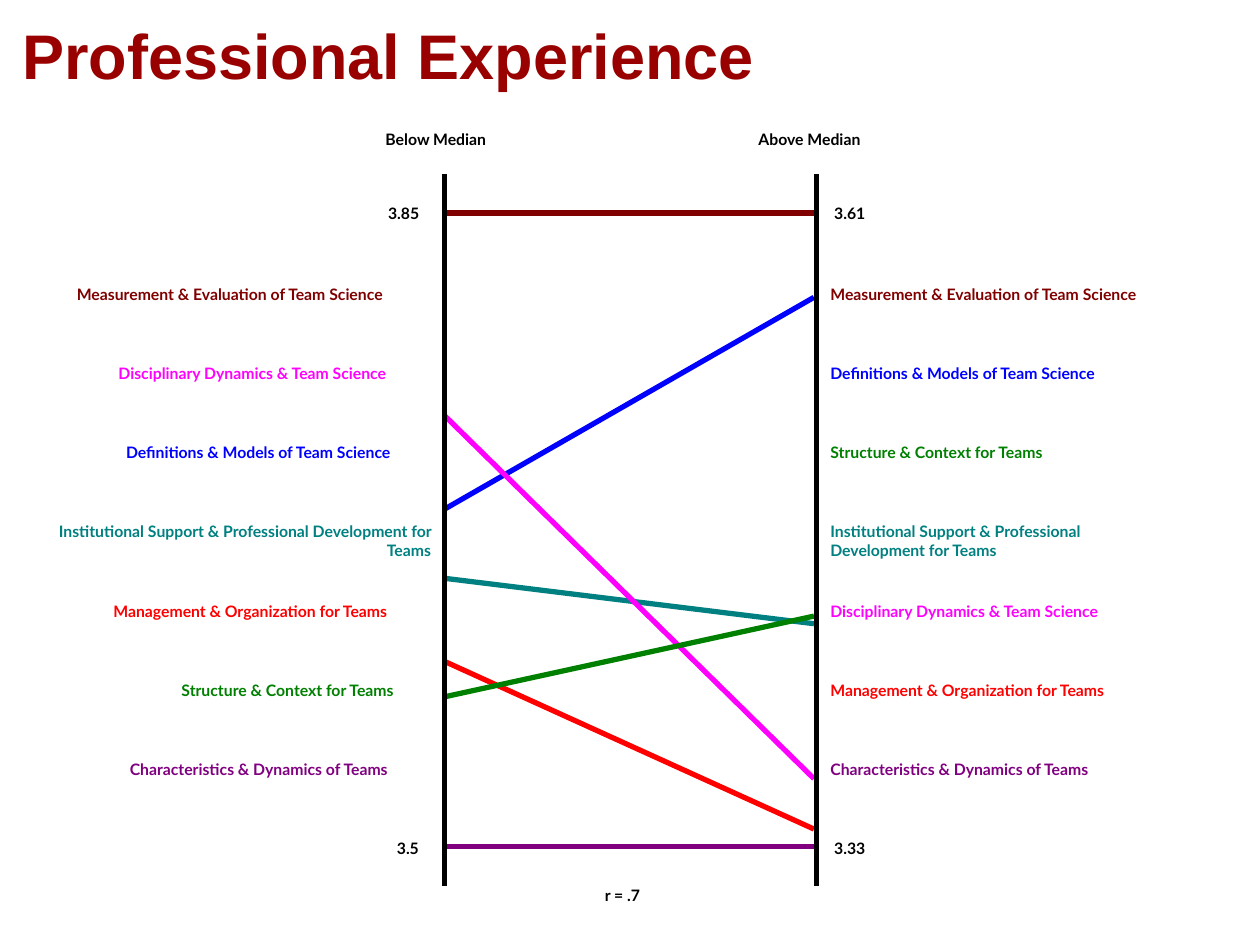
from dataclasses import dataclass

from lxml import etree
from pptx import Presentation
from pptx import util as u
from pptx.dml.color import RGBColor
from pptx.enum import shapes, text
from pptx.oxml.ns import qn

HUES = {
    "title": "990000", "ink": "000000", "maroon": "800000", "pink": "FF00FF",
    "blue": "0000FF", "teal": "008080", "red": "FF0000", "green": "008000",
    "purple": "800080",
}
TOP = 2.26
STEP = 0.628
EDGE = 3.42
RIGHT = 6.59


@dataclass
class Topic:
    name: str
    hue: str
    ranks: tuple[int, int]
    ends: tuple[float, float]
    widths: tuple[float, float]
    wrap: bool = False


@dataclass
class Note:
    words: str
    left: float
    top: float
    width: float


TOPICS = [
    Topic("Management & Organization for Teams", "red", (4, 5), (5.25, 6.58), (2.52, 2.52)),
    Topic("Characteristics & Dynamics of Teams", "purple", (6, 6), (6.72, 6.72), (2.39, 2.39)),
    Topic("Definitions & Models of Team Science", "blue", (2, 1), (4.04, 2.36), (2.42, 2.42)),
    Topic("Institutional Support & Professional Development for Teams", "teal",
          (3, 3), (4.59, 4.95), (3.09, 2.58), True),
    Topic("Disciplinary Dynamics & Team Science", "pink", (1, 4), (3.3, 6.18), (2.48, 2.48)),
    Topic("Measurement & Evaluation of Team Science", "maroon", (0, 0), (1.69, 1.69), (2.81, 2.81)),
    Topic("Structure & Context for Teams", "green", (5, 2), (5.53, 4.89), (1.98, 1.98)),
]

NOTES = [
    Note("r = .7", 4.8, 7.03, 0.41),
    Note("Below Median", 3.06, 1.03, 0.94),
    Note("Above Median", 6.02, 1.03, 0.94),
    Note("3.85", 3.08, 1.62, 0.35),
    Note("3.5", 3.15, 6.66, 0.27),
    Note("3.61", 6.62, 1.62, 0.35),
    Note("3.33", 6.62, 6.66, 0.35),
]


def style(para, size: float, face: str, hue: str) -> None:
    para.font.size = u.Pt(size)
    para.font.name = face
    para.font.bold = True
    para.font.color.rgb = RGBColor.from_string(HUES[hue])


def label(slide, note: Note, hue: str = "ink", wrap: bool = False, flush: bool = False) -> None:
    box = slide.shapes.add_textbox(
        u.Inches(note.left), u.Inches(note.top),
        u.Inches(note.width), u.Inches(0.3 if wrap else 0.19))
    frame = box.text_frame
    frame.margin_left = frame.margin_right = frame.margin_top = frame.margin_bottom = 0
    frame.word_wrap = wrap
    frame.auto_size = text.MSO_AUTO_SIZE.SHAPE_TO_FIT_TEXT
    para = frame.paragraphs[0]
    para.text = note.words
    para.alignment = text.PP_ALIGN.RIGHT if flush else text.PP_ALIGN.LEFT
    style(para, 9, "Lato", hue)


def line(slide, start: tuple[float, float], end: tuple[float, float], hue: str) -> None:
    rule = slide.shapes.add_connector(
        shapes.MSO_CONNECTOR.STRAIGHT, *map(u.Inches, start + end))
    rule.line.width = u.Pt(3)
    rule.line.color.rgb = RGBColor.from_string(HUES[hue])
    etree.SubElement(rule._element.spPr, qn("a:effectLst"))


def trend(slide, topic: Topic) -> None:
    line(slide, (3.53, topic.ends[0]), (6.46, topic.ends[1]), topic.hue)
    lefts = (EDGE - topic.widths[0], RIGHT)
    for side, left in enumerate(lefts):
        top = TOP + STEP * topic.ranks[side]
        note = Note(topic.name, left, top, topic.widths[side])
        label(slide, note, topic.hue, topic.wrap, topic.wrap and side == 0)


def head(slide) -> None:
    box = slide.shapes.add_textbox(
        u.Inches(0.08), u.Inches(0.08), u.Inches(9.83), u.Inches(0.7))
    frame = box.text_frame
    frame.word_wrap = True
    frame.vertical_anchor = text.MSO_ANCHOR.MIDDLE
    para = frame.paragraphs[0]
    para.text = "Professional Experience"
    style(para, 36, "Arial", "title")


def main() -> None:
    deck = Presentation()
    deck.slide_width = u.Inches(10)
    deck.slide_height = u.Inches(7.5)
    slide = deck.slides.add_slide(deck.slide_layouts[6])
    head(slide)
    for note in NOTES:
        label(slide, note)
    for topic in TOPICS:
        trend(slide, topic)
    for axis in (3.53, 6.48):
        line(slide, (axis, 1.38), (axis, 7.03), "ink")
    deck.save("out.pptx")


if __name__ == "__main__":
    main()
